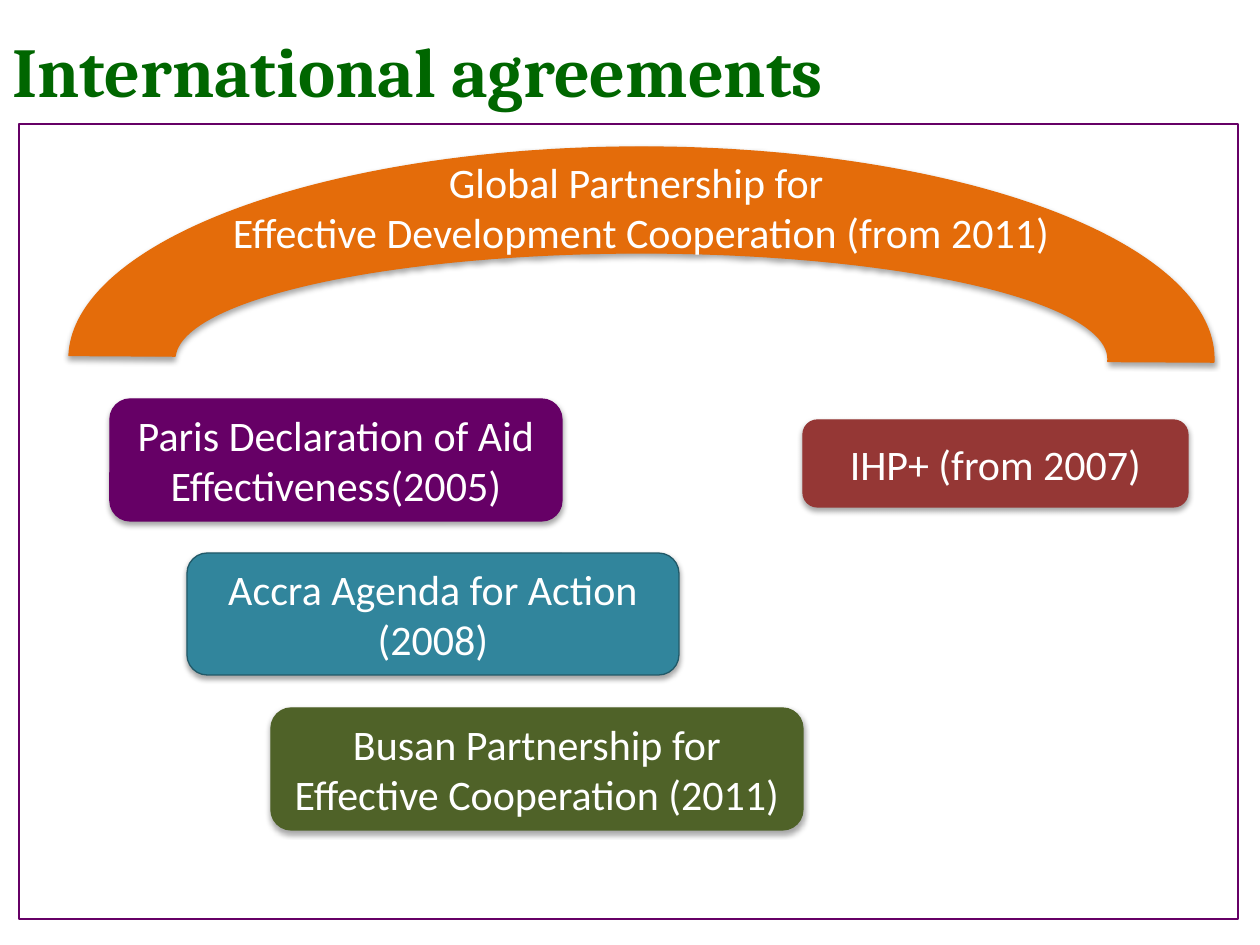
"""Build the slide on international agreements."""
import pptx
import pptx.dml.color
import pptx.enum.shapes
import pptx.enum.text
import pptx.util

RGB = pptx.dml.color.RGBColor
KIND = pptx.enum.shapes.MSO_SHAPE
ALIGN = pptx.enum.text.PP_ALIGN
MIDDLE = pptx.enum.text.MSO_ANCHOR.MIDDLE
NOFIT = pptx.enum.text.MSO_AUTO_SIZE.NONE
Pt = pptx.util.Pt

WHITE = RGB(0xFF, 0xFF, 0xFF)
GREEN = RGB(0x00, 0x66, 0x00)
PURPLE = RGB(0x66, 0x00, 0x66)
TEAL = RGB(0x31, 0x85, 0x9C)
NAVY = RGB(0x21, 0x59, 0x68)
OLIVE = RGB(0x4F, 0x62, 0x28)
RED = RGB(0x95, 0x37, 0x35)
ORANGE = RGB(0xE4, 0x6C, 0x0A)

SCALE = 914400 / 126
HEAD = {"name": "Cambria", "size": Pt(40), "bold": True}
BODY = {"name": "Calibri", "size": Pt(24), "bold": False}


def draw(kind, area, fill, line):
    shape = slide.shapes.add_shape(kind, *[round(n * SCALE) for n in area])
    shape.fill.solid()
    shape.fill.fore_color.rgb = fill
    shape.line.color.rgb = line
    shape.line.width = Pt(0.75)
    return shape


def write(frame, lines, style, color, align):
    frame.word_wrap = True
    frame.text = "\n".join(lines)
    for para in frame.paragraphs:
        para.alignment = align
        font = para.runs[0].font
        for key, value in style.items():
            setattr(font, key, value)
        font.color.rgb = color


deck = pptx.Presentation()
deck.slide_width = round(1260 * SCALE)
deck.slide_height = round(945 * SCALE)
slide = deck.slides.add_slide(deck.slide_layouts[5])

title = slide.shapes.title
place = {"left": 0, "top": 0, "width": 1149, "height": 140}
for key, value in place.items():
    setattr(title, key, round(value * SCALE))
write(title.text_frame, ["International agreements"], HEAD, GREEN, ALIGN.LEFT)
title.text_frame.vertical_anchor = MIDDLE
title.text_frame.auto_size = NOFIT

panel = draw(KIND.RECTANGLE, (19, 124, 1219, 795), WHITE, PURPLE)
panel.shadow.inherit = False

pacts = [
    ("Paris Declaration of Aid Effectiveness(2005)", (110, 399, 452, 122), PURPLE, PURPLE),
    ("Accra Agenda for Action (2008)", (187, 553, 492, 122), TEAL, NAVY),
    ("Busan Partnership for Effective Cooperation (2011)", (271, 708, 532, 122), OLIVE, OLIVE),
    ("IHP+ (from 2007)", (803, 420, 385, 87), RED, RED),
]
for text, area, fill, line in pacts:
    box = draw(KIND.ROUNDED_RECTANGLE, area, fill, line)
    write(box.text_frame, [text], BODY, WHITE, ALIGN.CENTER)
    box.text_frame.vertical_anchor = MIDDLE

arch = draw(KIND.BLOCK_ARC, (69, 147, 1145, 424), ORANGE, ORANGE)
for index, value in enumerate((108.21, 0.19, 0.25)):
    arch.adjustments[index] = value

label = slide.shapes.add_textbox(*[round(n * SCALE) for n in (171, 150, 940, 115)])
words = ["Global Partnership for ", "Effective Development Cooperation (from 2011)"]
write(label.text_frame, words, BODY, WHITE, ALIGN.CENTER)

deck.save("out.pptx")
